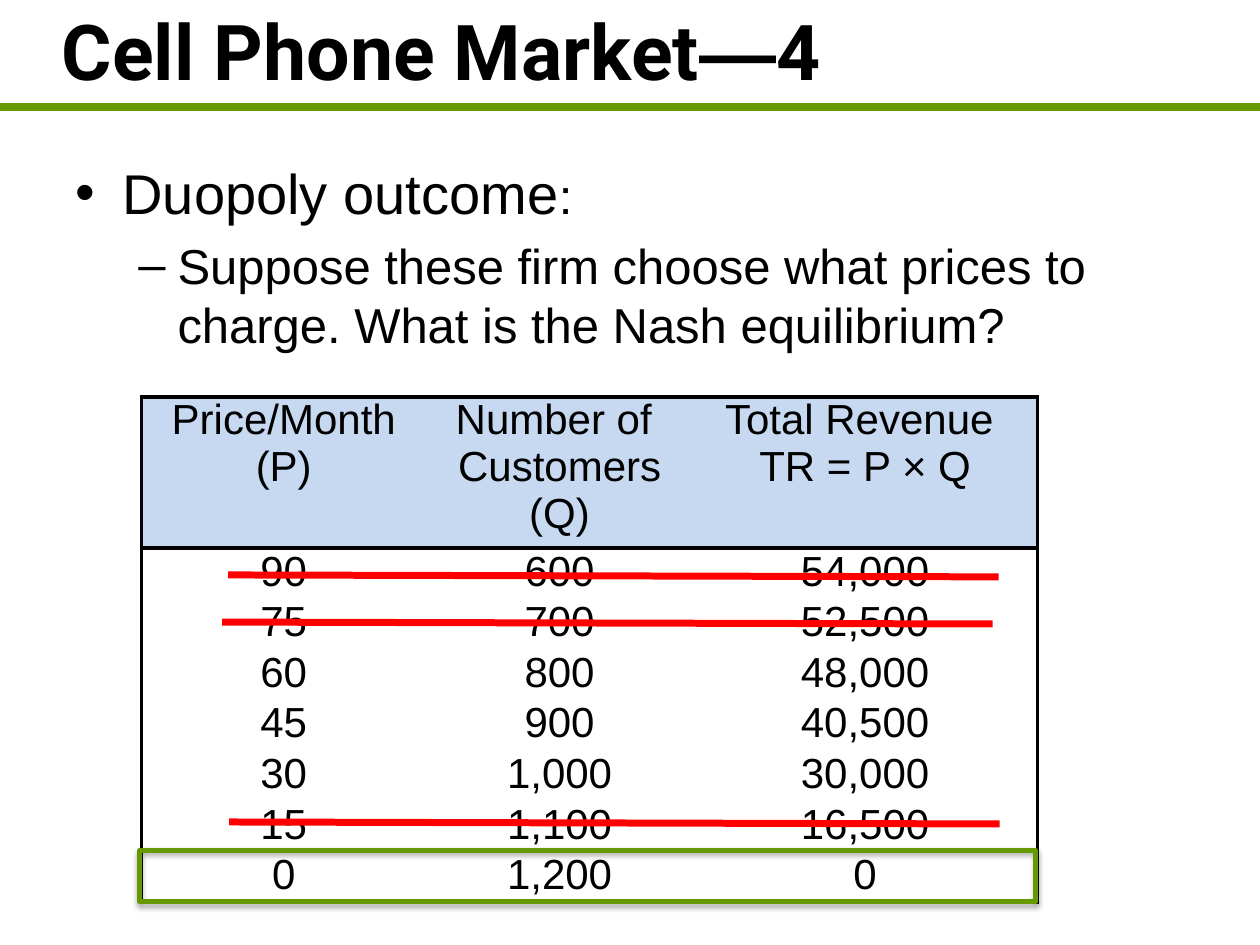
from dataclasses import dataclass

from lxml import etree
from pptx import Presentation
from pptx import util as u
from pptx.dml.color import RGBColor
from pptx.enum import shapes, text
from pptx.oxml.ns import qn


@dataclass(frozen=True)
class Theme:
    ink: str = "000000"
    green: str = "669900"
    red: str = "FF0000"
    header: str = "C6D9F1"
    heading_font: str = "Roboto"
    body_font: str = "Arial"
    title: int = 44
    bullet: int = 32
    detail: int = 28
    table: int = 24


THEME = Theme()
HEADERS = [["Price/Month", "(P)"],
           ["Number of ", "Customers (Q)"],
           ["Total Revenue ", "TR = P × Q"]]
ROWS = [("90", "600", "54,000"), ("75", "700", "52,500"),
        ("60", "800", "48,000"), ("45", "900", "40,500"),
        ("30", "1,000", "30,000"), ("15", "1,100", "16,500"),
        ("0", "1,200", "0")]
LEFT, TOP = 2.85, 8.0
COLUMNS = [5.74, 5.38, 6.94]
HEADER_HEIGHT, ROW_HEIGHT = 3.05, 1.02


def xml_child(parent, tag, **attributes):
    return etree.SubElement(parent, qn(tag), attributes)


def add_text(para, words, size, font=THEME.body_font, color=THEME.ink, bold=False):
    span = para.add_run()
    span.text = words
    span.font.size = u.Pt(size)
    span.font.name = font
    span.font.bold = bold
    span.font.color.rgb = RGBColor.from_string(color)


def set_bullet(para, mark, margin, hang):
    props = para._p.get_or_add_pPr()
    props.set("marL", str(u.Cm(margin)))
    props.set("indent", str(-u.Cm(hang)))
    xml_child(props, "a:buFont", typeface=THEME.body_font)
    xml_child(props, "a:buChar", char=mark)


def set_borders(cell, edges, color=THEME.ink, width=2.25):
    """Draw the edges named by letters of LRTB and clear the others."""
    props = cell._tc.get_or_add_tcPr()
    for place, edge in enumerate("LRTB"):
        line = xml_child(props, f"a:ln{edge}", w=str(u.Pt(width)))
        if edge in edges:
            fill = xml_child(line, "a:solidFill")
            xml_child(fill, "a:srgbClr", val=color)
        else:
            xml_child(line, "a:noFill")
        props.insert(place, line)


class SlideBuilder:
    def __init__(self, page, theme):
        self.page = page
        self.theme = theme

    def text_box(self, left, top, width, height, anchor=text.MSO_ANCHOR.TOP):
        box = self.page.shapes.add_textbox(*map(u.Cm, (left, top, width, height)))
        frame = box.text_frame
        frame.word_wrap = True
        frame.vertical_anchor = anchor
        return frame

    def line(self, x1, y1, x2, y2, color, width):
        line = self.page.shapes.add_connector(
            shapes.MSO_CONNECTOR.STRAIGHT, *map(u.Cm, (x1, y1, x2, y2)))
        line.line.color.rgb = RGBColor.from_string(color)
        line.line.width = u.Pt(width)
        xml_child(line._element.spPr, "a:effectLst")

    def frame(self, left, top, width, height, color, weight):
        """Outline an area with a soft shadow below it."""
        box = self.page.shapes.add_shape(
            shapes.MSO_SHAPE.RECTANGLE, *map(u.Cm, (left, top, width, height)))
        box.fill.background()
        box.line.color.rgb = RGBColor.from_string(color)
        box.line.width = u.Pt(weight)
        box.shadow.inherit = False
        effects = box._element.spPr.find(qn("a:effectLst"))
        shadow = xml_child(effects, "a:outerShdw", blurRad=str(u.Pt(3.1)),
                           dist=str(u.Pt(1.8)), dir="5400000", rotWithShape="0")
        shade = xml_child(shadow, "a:srgbClr", val=self.theme.ink)
        xml_child(shade, "a:alpha", val="35000")

    def cell(self, cell, lines, fill, edges):
        cell.margin_left = cell.margin_right = u.Cm(0.2)
        cell.margin_top = cell.margin_bottom = 0
        if fill:
            cell.fill.solid()
            cell.fill.fore_color.rgb = RGBColor.from_string(fill)
        else:
            cell.fill.background()
        set_borders(cell, edges)
        frame = cell.text_frame
        for index, words in enumerate(lines):
            para = frame.add_paragraph() if index else frame.paragraphs[0]
            para.alignment = text.PP_ALIGN.CENTER
            add_text(para, words, self.theme.table)

    def table(self, left, top, headers, rows, columns, header_height, row_height):
        height = header_height + row_height * len(rows)
        table = self.page.shapes.add_table(
            len(rows) + 1, len(columns),
            *map(u.Cm, (left, top, sum(columns), height))).table
        table.first_row = table.horz_banding = False
        for column, width in zip(table.columns, columns):
            column.width = u.Cm(width)
        content = [headers] + [[[value] for value in row] for row in rows]
        for r, row in enumerate(content):
            table.rows[r].height = u.Cm(row_height if r else header_height)
            for c, lines in enumerate(row):
                edges = (("L" if c == 0 else "")
                         + ("R" if c == len(columns) - 1 else "")
                         + ("T" if r < 2 else "")
                         + ("B" if r in (0, len(rows)) else ""))
                self.cell(table.cell(r, c), lines,
                          None if r else self.theme.header, edges)


def main():
    deck = Presentation()
    deck.slide_width, deck.slide_height = u.Cm(25.4), u.Cm(19.05)
    page = deck.slides.add_slide(deck.slide_layouts[6])
    slide = SlideBuilder(page, THEME)

    slide.line(0, 2.16, 25.4, 2.16, THEME.green, 4.5)
    title = slide.text_box(1, -0.25, 22.86, 2.51, text.MSO_ANCHOR.MIDDLE).paragraphs[0]
    for words, font in (("Cell Phone Market", THEME.heading_font),
                        ("—", THEME.body_font), ("4", THEME.heading_font)):
        add_text(title, words, THEME.title, font=font, bold=True)

    body = slide.text_box(1.27, 3.07, 22.86, 8.97)
    topic = body.paragraphs[0]
    topic.space_before = u.Pt(0.2 * THEME.bullet)
    set_bullet(topic, "•", 0.95, 0.95)
    add_text(topic, "Duopoly outcome", THEME.bullet)
    add_text(topic, ":", THEME.detail)
    question = body.add_paragraph()
    question.level = 1
    question.space_before = u.Pt(0.2 * THEME.detail)
    set_bullet(question, "–", 2.06, 0.79)
    add_text(question, "Suppose these firm choose what prices to charge. "
             "What is the Nash equilibrium?", THEME.detail)

    slide.table(LEFT, TOP, HEADERS, ROWS, COLUMNS, HEADER_HEIGHT, ROW_HEIGHT)
    for x, y in ((4.6, 11.59), (4.48, 12.54), (4.62, 16.57)):
        slide.line(x, y, x + 15.53, y + 0.04, THEME.red, 4)
    last_row = TOP + HEADER_HEIGHT + ROW_HEIGHT * (len(ROWS) - 1)
    slide.frame(LEFT - 0.03, last_row - 0.03, sum(COLUMNS), 1.04, THEME.green, 3)

    deck.save("out.pptx")


if __name__ == "__main__":
    main()
